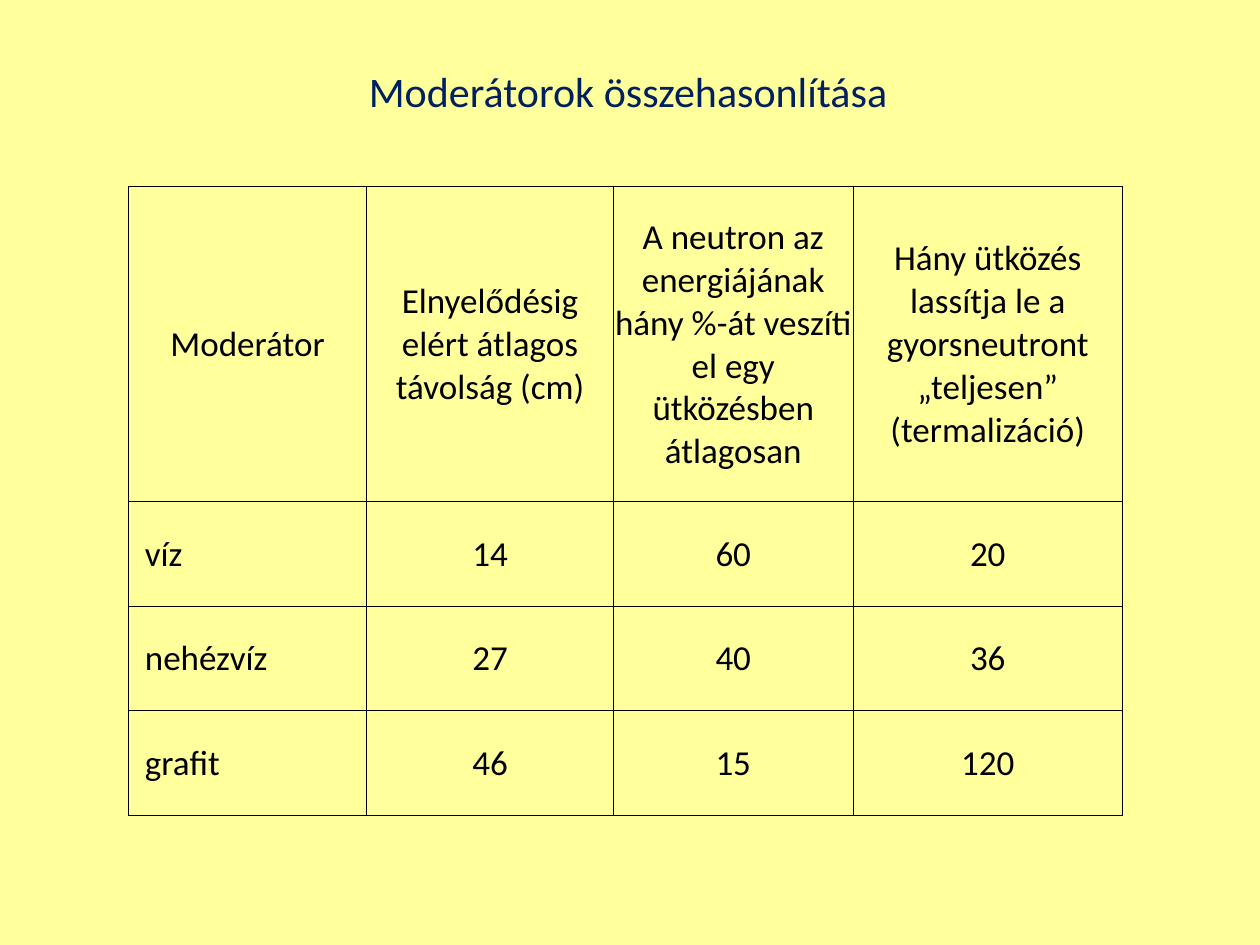
from dataclasses import dataclass

from lxml.etree import SubElement
from pptx import Presentation
from pptx.dml.color import RGBColor
from pptx.enum.text import MSO_ANCHOR, MSO_AUTO_SIZE, PP_ALIGN
from pptx.oxml.ns import qn
from pptx.slide import Slide
from pptx.table import _Cell
from pptx.text.text import TextFrame
from pptx.util import Inches, Pt

CREAM = RGBColor(0xFF, 0xFF, 0x9B)
NAVY = RGBColor(0x00, 0x20, 0x60)
BLACK = RGBColor(0x00, 0x00, 0x00)
FONT = "Calibri"
WIDTHS = (1.89, 1.96, 1.9, 2.14)
HEAD_HIGH = 2.5
ROW_HIGH = 0.83
INSET = 0.01
INDENT = 0.13


@dataclass
class Entry:
    name: str
    range: str
    loss: str
    hits: str

    def texts(self) -> tuple[str, ...]:
        return self.name, self.range, self.loss, self.hits


HEAD = Entry(
    "Moderátor",
    "Elnyelődésig elért átlagos távolság (cm)",
    "A neutron az energiájának hány %-át veszíti el egy ütközésben átlagosan",
    "Hány ütközés lassítja le a gyorsneutront „teljesen” (termalizáció)",
)
ENTRIES = (
    Entry("víz", "14", "60", "20"),
    Entry("nehézvíz", "27", "40", "36"),
    Entry("grafit", "46", "15", "120"),
)


def set_text(frame: TextFrame, text: str, size: int, color: RGBColor, align: PP_ALIGN) -> None:
    frame.text = text
    line = frame.paragraphs[0]
    line.alignment = align
    font = line.runs[0].font
    font.name = FONT
    font.size = Pt(size)
    font.color.rgb = color


def set_edges(cell: _Cell) -> None:
    props = cell._tc.get_or_add_tcPr()
    for side in ("a:lnL", "a:lnR", "a:lnT", "a:lnB"):
        edge = SubElement(props, qn(side), w=str(Pt(0.5)))
        fill = SubElement(edge, qn("a:solidFill"))
        SubElement(fill, qn("a:srgbClr"), val=str(BLACK))


def fill_cell(cell: _Cell, text: str, label: bool) -> None:
    align = PP_ALIGN.LEFT if label else PP_ALIGN.CENTER
    set_text(cell.text_frame, text, 20, BLACK, align)
    cell.vertical_anchor = MSO_ANCHOR.MIDDLE
    cell.margin_left = Inches(INDENT if label else INSET)
    cell.margin_right = cell.margin_top = Inches(INSET)
    cell.margin_bottom = 0
    set_edges(cell)
    cell.fill.background()


def add_title(slide: Slide) -> None:
    title = slide.shapes.title
    title.left, title.top = Inches(2.81), Inches(0.47)
    title.width, title.height = Inches(4.35), Inches(0.5)
    frame = title.text_frame
    set_text(frame, "Moderátorok összehasonlítása", 24, NAVY, PP_ALIGN.CENTER)
    frame.word_wrap = False
    frame.auto_size = MSO_AUTO_SIZE.NONE
    frame.vertical_anchor = MSO_ANCHOR.TOP


def add_grid(slide: Slide) -> None:
    rows = (HEAD, *ENTRIES)
    highs = (HEAD_HIGH, *[ROW_HIGH] * len(ENTRIES))
    grid = slide.shapes.add_table(
        len(rows), len(WIDTHS), Inches(1.02), Inches(1.48),
        Inches(sum(WIDTHS)), Inches(sum(highs)),
    ).table
    grid.first_row = grid.horz_banding = False
    for col, width in zip(grid.columns, WIDTHS):
        col.width = Inches(width)
    for row, entry, high in zip(grid.rows, rows, highs):
        row.height = Inches(high)
        for i, (cell, text) in enumerate(zip(row.cells, entry.texts())):
            fill_cell(cell, text, i == 0 and entry is not HEAD)


def main() -> None:
    deck = Presentation()
    deck.slide_width, deck.slide_height = Inches(10), Inches(7.5)
    slide = deck.slides.add_slide(deck.slide_layouts.get_by_name("Title Only"))
    slide.background.fill.solid()
    slide.background.fill.fore_color.rgb = CREAM
    add_title(slide)
    add_grid(slide)
    deck.save("out.pptx")


if __name__ == "__main__":
    main()
